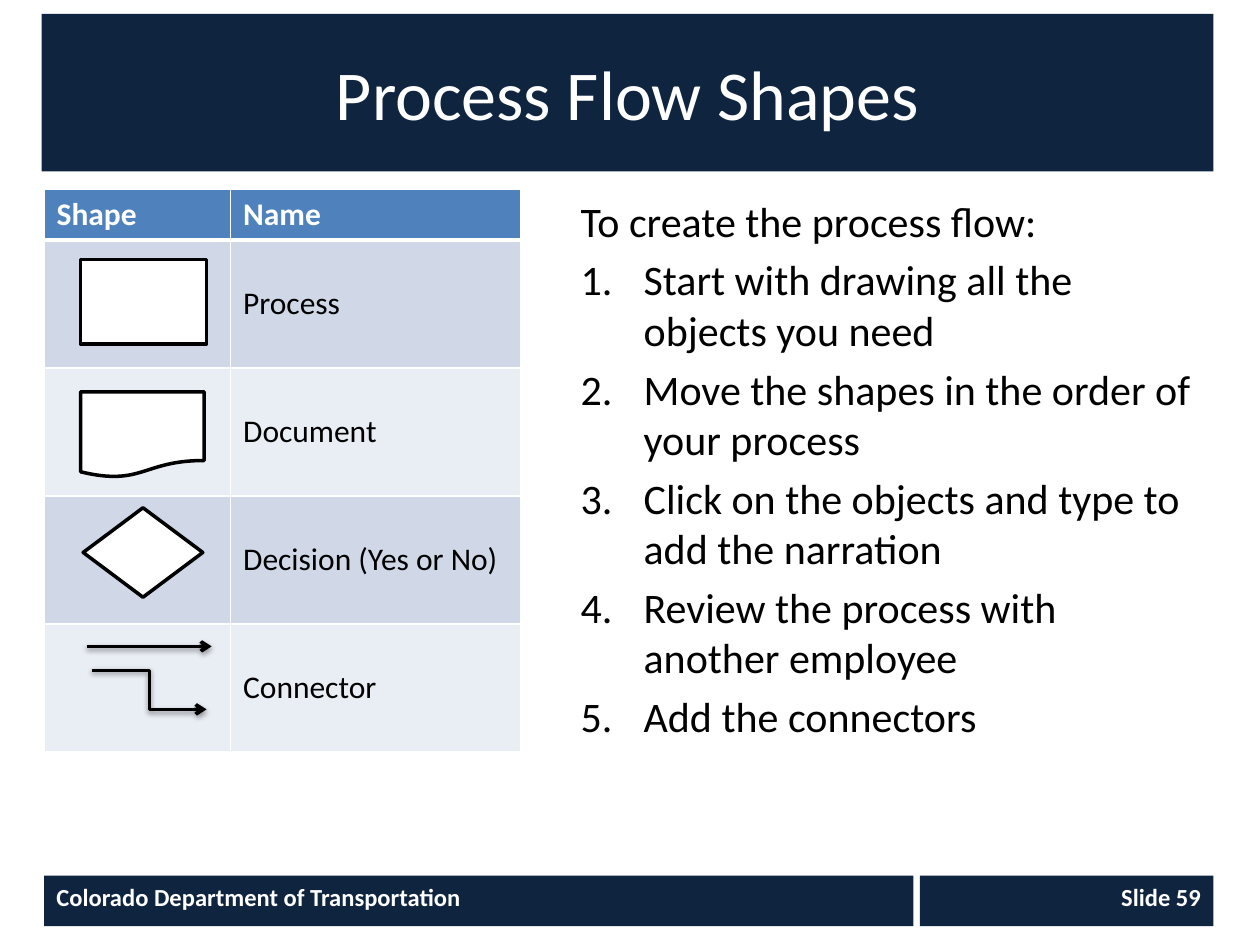
from lxml import etree
from pptx import Presentation
from pptx import util as u
from pptx.dml.color import RGBColor
from pptx.enum import shapes, text
from pptx.oxml import parse_xml
from pptx.oxml.ns import nsdecls, qn

FONT = "Calibri"
COLORS = {
    "navy": "0F243E",
    "header": "4F81BD",
    "band_dark": "D0D8E8",
    "band_light": "E9EDF4",
    "white": "FFFFFF",
    "black": "000000",
}
SHAPE_NAMES = ["Process", "Document", "Decision (Yes or No)", "Connector"]
STEPS = [
    "Start with drawing all the objects you need",
    "Move the shapes in the order of your process",
    "Click on the objects and type to add the narration",
    "Review the process with another employee",
    "Add the connectors",
]
KIND = shapes.MSO_SHAPE
ALIGN = text.PP_ALIGN
ANCHOR = text.MSO_ANCHOR


def color(name):
    return RGBColor.from_string(COLORS[name])


def inches(values):
    return [u.Inches(value) for value in values]


def style_text(para, size, color_name, bold=False):
    for span in para.runs:
        span.font.name = FONT
        span.font.size = u.Pt(size)
        span.font.bold = bold
        span.font.color.rgb = color(color_name)


def add_shape(page, kind, place, fill, outline=None):
    shape = page.shapes.add_shape(kind, *inches(place))
    shape.shadow.inherit = False
    shape.fill.solid()
    shape.fill.fore_color.rgb = color(fill)
    if outline:
        shape.line.color.rgb = color(outline)
        shape.line.width = u.Pt(2)
    else:
        shape.line.fill.background()
    return shape


def add_bar(page, place, words, size, align, anchor=ANCHOR.TOP, bold=True):
    """Add a navy bar holding one line of white text."""
    frame = add_shape(page, KIND.RECTANGLE, place, "navy").text_frame
    frame.text = words
    frame.vertical_anchor = anchor
    frame.paragraphs[0].alignment = align
    style_text(frame.paragraphs[0], size, "white", bold)


def set_borders(cell, widths):
    """Draw white borders; widths are points for left, right, top, bottom."""
    properties = cell._tc.get_or_add_tcPr()
    for index, (side, width) in enumerate(zip("LRTB", widths)):
        properties.insert(index, parse_xml(
            f'<a:ln{side} {nsdecls("a")} w="{u.Pt(width)}"><a:solidFill>'
            f'<a:srgbClr val="{COLORS["white"]}"/></a:solidFill></a:ln{side}>'))


def add_shape_table(page):
    rows = [("Shape", "Name")] + [("", name) for name in SHAPE_NAMES]
    frame = page.shapes.add_table(len(rows), 2, *inches((0.35, 1.5, 3.78, 4.46)))
    table = frame.table
    for column, width in zip(table.columns, (1.48, 2.3)):
        column.width = u.Inches(width)
    for row, words in enumerate(rows):
        is_header = row == 0
        table.rows[row].height = u.Inches(0.4 if is_header else 1.016)
        band = "header" if is_header else ("band_light", "band_dark")[row % 2]
        for column, word in enumerate(words):
            cell = table.cell(row, column)
            cell.fill.solid()
            cell.fill.fore_color.rgb = color(band)
            cell.vertical_anchor = ANCHOR.MIDDLE
            set_borders(cell, (1, 1, 3 if row == 1 else 1, 3 if is_header else 1))
            if word:
                cell.text = word
                style_text(cell.text_frame.paragraphs[0], 18,
                           "white" if is_header else "black", is_header)


def number_paragraph(para):
    properties = para._p.get_or_add_pPr()
    properties.set("marL", str(u.Inches(0.5)))
    properties.set("indent", str(-u.Inches(0.5)))
    etree.SubElement(properties, qn("a:buFont"), typeface="+mj-lt")
    etree.SubElement(properties, qn("a:buAutoNum"), type="arabicPeriod")


def add_instructions(page):
    box = page.shapes.add_textbox(*inches((4.51, 1.5, 5.12, 5.4)))
    frame = box.text_frame
    frame.word_wrap = True
    frame.text = "\n".join(["To create the process flow:"] + STEPS)
    for index, para in enumerate(frame.paragraphs):
        para.space_before = u.Pt(4.8)
        style_text(para, 24, "black")
        if index:
            number_paragraph(para)


def add_arrow(page, kind, start, end):
    """Add a black arrow with a soft shadow below it."""
    arrow = page.shapes.add_connector(kind, *inches(start + end))
    arrow.line.color.rgb = color("black")
    arrow.line.width = u.Pt(2)
    etree.SubElement(arrow.line._get_or_add_ln(), qn("a:tailEnd"), type="arrow")
    arrow._element.spPr.append(parse_xml(
        f'<a:effectLst {nsdecls("a")}><a:outerShdw blurRad="{u.Pt(3.1)}" '
        f'dist="{u.Pt(1.6)}" dir="5400000" rotWithShape="0">'
        f'<a:srgbClr val="{COLORS["black"]}"><a:alpha val="38000"/></a:srgbClr>'
        '</a:outerShdw></a:effectLst>'))


def main():
    deck = Presentation()
    deck.slide_width, deck.slide_height = inches((10, 7.5))
    page = deck.slides.add_slide(deck.slide_layouts[6])

    add_bar(page, (0.33, 0.11, 9.3, 1.25), "Process Flow Shapes", 40,
            ALIGN.CENTER, ANCHOR.MIDDLE, bold=False)
    add_shape_table(page)
    add_instructions(page)
    add_bar(page, (0.35, 6.95, 6.9, 0.4),
            "Colorado Department of Transportation", 14, ALIGN.LEFT)
    add_bar(page, (7.3, 6.95, 2.33, 0.4), "Slide 59", 14, ALIGN.RIGHT)

    for kind, place in (
        (KIND.FLOWCHART_PROCESS, (0.64, 2.06, 1, 0.67)),
        (KIND.FLOWCHART_DOCUMENT, (0.64, 3.11, 0.98, 0.68)),
        (KIND.FLOWCHART_DECISION, (0.66, 4.03, 0.95, 0.71)),
    ):
        add_shape(page, kind, place, "white", "black")
    add_arrow(page, shapes.MSO_CONNECTOR.STRAIGHT, (0.69, 5.13), (1.68, 5.13))
    add_arrow(page, shapes.MSO_CONNECTOR.ELBOW, (0.73, 5.32), (1.64, 5.63))

    deck.save("out.pptx")


if __name__ == "__main__":
    main()
